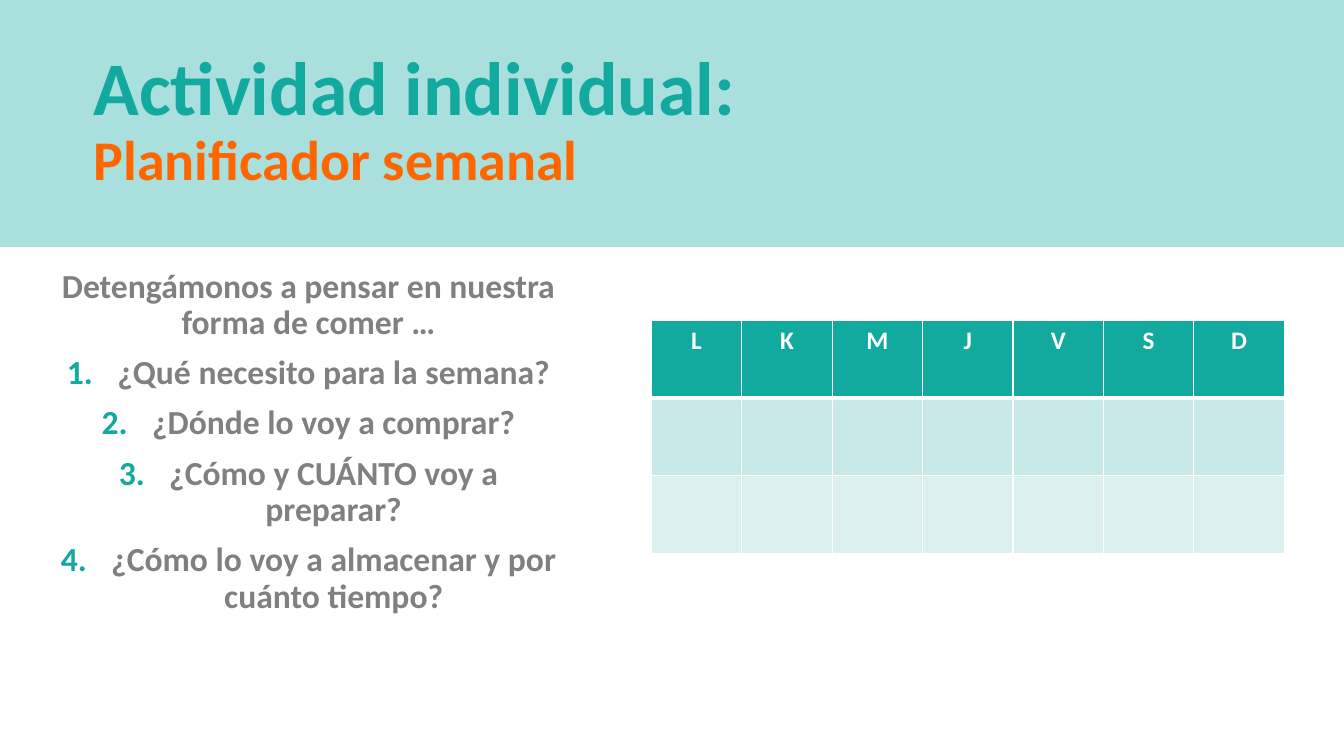
from lxml import etree
from pptx import Presentation
from pptx import util as u
from pptx.dml.color import RGBColor
from pptx.enum import shapes, text
from pptx.oxml import ns

PX = 9144  # 100 px to the inch
TEAL = RGBColor(0x12, 0xA9, 0x9F)
ORANGE = RGBColor(0xFF, 0x66, 0x00)
GREY = RGBColor(0x80, 0x80, 0x80)
WHITE = RGBColor(0xFF, 0xFF, 0xFF)
PALE = RGBColor(0xC7, 0xEA, 0xE8)
PALER = RGBColor(0xDA, 0xF1, 0xF0)


def px(*lengths):
    return [u.Emu(length * PX) for length in lengths]


def style(font, size, color):
    for name, value in dict(name="Calibri", size=u.Pt(size), bold=True).items():
        setattr(font, name, value)
    font.color.rgb = color


deck = Presentation()
deck.slide_width, deck.slide_height = px(1333, 750)
slide = deck.slides.add_slide(deck.slide_layouts[6])

# Header band
band = slide.shapes.add_shape(shapes.MSO_SHAPE.RECTANGLE, *px(0, 0, 1333, 245))
band.shadow.inherit = False
band.line.fill.background()
band.fill.solid()
band.fill.fore_color.rgb = TEAL
band_color = band.fill._xPr.find(".//" + ns.qn("a:srgbClr"))
etree.SubElement(band_color, ns.qn("a:alpha"), val="36000")

# Questions
questions = [
    "¿Qué necesito para la semana?",
    "¿Dónde lo voy a comprar?",
    "¿Cómo y CUÁNTO voy a preparar?",
    "¿Cómo lo voy a almacenar y por cuánto tiempo?",
]
reflection = slide.shapes.add_textbox(*px(41, 262, 530, 409)).text_frame
reflection.word_wrap = True
intro = reflection.paragraphs[0]
intro.text = "Detengámonos a pensar en nuestra forma de comer …"
for question in questions:
    item = reflection.add_paragraph()
    item.text = question
    item.space_before = u.Pt(10)
    item_format = item._p.get_or_add_pPr()
    indent = px(50)[0]
    item_format.set("marL", str(indent))
    item_format.set("indent", str(-indent))
    number_color = etree.SubElement(item_format, ns.qn("a:buClr"))
    etree.SubElement(number_color, ns.qn("a:srgbClr"), val=str(TEAL))
    etree.SubElement(item_format, ns.qn("a:buFont"), typeface="+mj-lt")
    etree.SubElement(item_format, ns.qn("a:buAutoNum"), type="arabicPeriod")
for paragraph in reflection.paragraphs:
    paragraph.alignment = text.PP_ALIGN.CENTER
    paragraph.line_spacing = 0.9
    style(paragraph.font, 24, GREY)
    style(paragraph.runs[0].font, 24, GREY)

# Title
heading = slide.shapes.add_textbox(*px(83, 45, 738, 76)).text_frame
heading.word_wrap = True
title = heading.paragraphs[0]
title.line_spacing = 0.9
for words, size, color in [
    ("Actividad individual: ", 54, TEAL),
    ("Planificador semanal", 40, ORANGE),
]:
    run = title.add_run()
    run.text = words
    style(run.font, size, color)

# Weekly planner
days = "LKMJVSD"
row_fills = [TEAL, PALE, PALER]
planner = slide.shapes.add_table(
    len(row_fills), len(days), *px(646, 318, 628, 231)
).table
for row, fill in enumerate(row_fills):
    for column, day in enumerate(days):
        cell = planner.cell(row, column)
        borders = dict(lnL=1, lnR=1, lnT=3 if row == 1 else 1, lnB=3 if row == 0 else 1)
        cell_format = cell._tc.get_or_add_tcPr()
        for side, width in borders.items():
            border = etree.SubElement(cell_format, ns.qn("a:" + side), w=str(u.Pt(width)))
            border_fill = etree.SubElement(border, ns.qn("a:solidFill"))
            etree.SubElement(border_fill, ns.qn("a:srgbClr"), val=str(WHITE))
        cell.fill.solid()
        cell.fill.fore_color.rgb = fill
        if row == 0:
            cell.text = day
            label = cell.text_frame.paragraphs[0]
            label.alignment = text.PP_ALIGN.CENTER
            style(label.runs[0].font, 18, WHITE)

deck.save("out.pptx")
